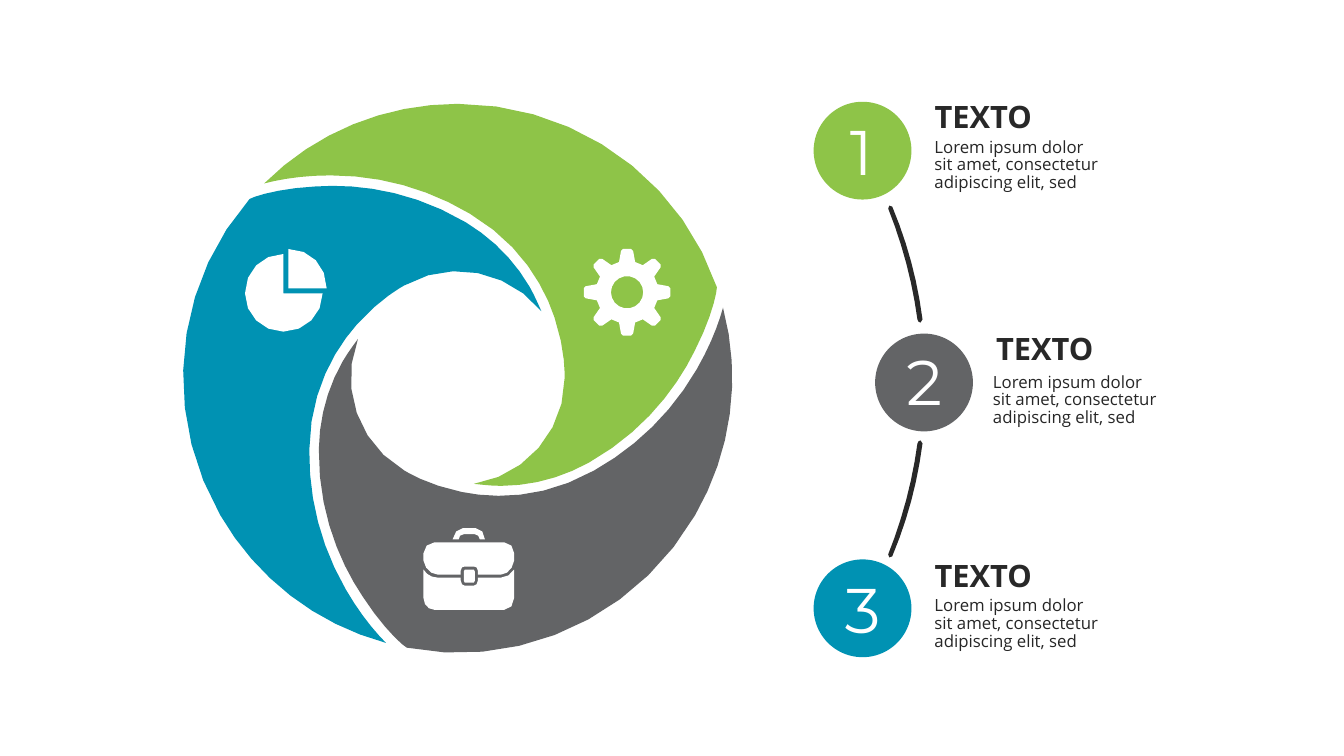
import math
from dataclasses import dataclass

import pptx
import pptx.dml.color
import pptx.enum.shapes
import pptx.enum.text
import pptx.util

Inches = pptx.util.Inches


@dataclass(frozen=True)
class Theme:
    """Colours, fonts and type sizes of the slide."""
    green: str = "8EC448"
    grey: str = "636466"
    blue: str = "0092B3"
    white: str = "FFFFFF"
    ink: str = "282828"
    body_ink: str = "262626"
    sans: str = "Open Sans"
    numeral: str = "Montserrat"
    title_size: int = 22
    body_size: int = 12
    number_size: int = 45


THEME = Theme()
WHEEL_CENTER = (4.54, 3.75)
GEAR_CENTER = (6.22, 2.9)
ARC_MIRROR = 7.57
SMOOTHNESS = 5
LOREM = "Lorem ipsum dolor sit amet, consectetur adipiscing elit, sed"

BLADE = [
    (5.84, 4.59), (6.41, 4.27, 6.73, 3.81, 6.89, 3.48),
    (7.05, 3.17, 7.11, 2.91, 7.11, 2.85), (6.74, 1.76, 5.7, 1.03, 4.54, 1.03),
    (3.82, 1.03, 3.13, 1.31, 2.62, 1.82), (2.77, 1.78, 3, 1.74, 3.28, 1.74),
    (3.77, 1.74, 4.24, 1.87, 4.66, 2.12), (5.17, 2.42, 5.4, 2.85, 5.5, 3.15),
    (5.61, 3.48, 5.6, 3.73, 5.6, 3.75), (5.6, 4.28, 5.21, 4.72, 4.7, 4.8),
    (4.79, 4.81, 4.88, 4.82, 4.97, 4.82), (5.27, 4.82, 5.57, 4.74, 5.84, 4.59),
]
ARC = [
    (9.13, 3.2), (9.12, 3.2, 9.1, 3.19, 9.1, 3.17),
    (9.05, 2.8, 8.95, 2.42, 8.81, 2.07), (8.8, 2.06, 8.81, 2.04, 8.82, 2.04),
    (8.83, 2.03, 8.85, 2.04, 8.85, 2.05), (9, 2.41, 9.1, 2.78, 9.15, 3.17),
    (9.16, 3.18, 9.15, 3.19, 9.13, 3.2),
]
PIE = [
    [(2.81, 2.91), (3.2, 2.91), (3.2, 3.12, 3.03, 3.29, 2.81, 3.29),
     (2.6, 3.29, 2.43, 3.12, 2.43, 2.91), (2.43, 2.69, 2.6, 2.52, 2.81, 2.52)],
    [(2.86, 2.47), (2.86, 2.86), (3.24, 2.86), (3.24, 2.64, 3.08, 2.47, 2.86, 2.47)],
]
BRIEFCASE = [
    [(4.81, 5.35), (4.76, 5.35), (4.76, 5.32, 4.73, 5.3, 4.71, 5.3), (4.6, 5.3),
     (4.57, 5.3, 4.55, 5.32, 4.55, 5.35), (4.49, 5.35),
     (4.5, 5.29, 4.54, 5.24, 4.59, 5.24), (4.72, 5.24),
     (4.77, 5.24, 4.81, 5.29, 4.81, 5.35)],
    [(4.34, 5.7), (4.57, 5.7), (4.57, 5.66), (4.57, 5.63, 4.59, 5.62, 4.61, 5.62),
     (4.7, 5.62), (4.72, 5.62, 4.74, 5.63, 4.74, 5.66), (4.74, 5.7), (4.97, 5.7),
     (5.03, 5.7, 5.09, 5.64, 5.1, 5.56), (5.1, 5.49),
     (5.1, 5.43, 5.06, 5.38, 5, 5.38), (4.31, 5.38),
     (4.25, 5.38, 4.2, 5.43, 4.2, 5.49), (4.2, 5.56),
     (4.21, 5.64, 4.28, 5.7, 4.34, 5.7)],
    [(4.97, 5.73), (4.74, 5.73), (4.74, 5.76), (4.74, 5.79, 4.72, 5.81, 4.7, 5.81),
     (4.61, 5.81), (4.59, 5.81, 4.57, 5.79, 4.57, 5.76), (4.57, 5.73), (4.34, 5.73),
     (4.28, 5.73, 4.23, 5.7, 4.2, 5.65), (4.2, 5.93),
     (4.2, 6, 4.25, 6.05, 4.31, 6.05), (5, 6.05),
     (5.06, 6.05, 5.1, 6, 5.1, 5.93), (5.1, 5.65),
     (5.07, 5.7, 5.02, 5.73, 4.97, 5.73)],
    [(4.7, 5.65), (4.61, 5.65), (4.6, 5.67), (4.6, 5.76), (4.61, 5.78),
     (4.7, 5.78), (4.71, 5.76), (4.71, 5.67)],
]


def trace(segments):
    """Turn line and cubic segments into points, finer on longer curves."""
    points = [segments[0]]
    for seg in segments[1:]:
        if len(seg) == 2:
            points.append(seg)
            continue
        x0, y0 = points[-1]
        x1, y1, x2, y2, x3, y3 = seg
        steps = math.ceil(SMOOTHNESS * math.sqrt(math.hypot(x3 - x0, y3 - y0)))
        for i in range(1, steps + 1):
            t = i / steps
            a, b, c, d = (1 - t) ** 3, 3 * t * (1 - t) ** 2, 3 * t * t * (1 - t), t ** 3
            points.append((a * x0 + b * x1 + c * x2 + d * x3,
                           a * y0 + b * y1 + c * y2 + d * y3))
    return points


def rotate(points, center, degrees):
    """Rotate points clockwise about a center."""
    cx, cy = center
    cos, sin = math.cos(math.radians(degrees)), math.sin(math.radians(degrees))
    return [(cx + (x - cx) * cos - (y - cy) * sin,
             cy + (x - cx) * sin + (y - cy) * cos) for x, y in points]


def gear_contours():
    """Return the eight-toothed rim and the hole of the gear."""
    cx, cy = GEAR_CENTER
    half = [(0.3, 0.08), (0.41, 0.06), (0.43, 0.04)]
    tooth = [(cx + x, cy - y) for x, y in half] + [(cx + x, cy + y) for x, y in half[::-1]]
    rim = [p for k in range(8) for p in rotate(tooth, GEAR_CENTER, 45 * k)]
    hole = [rotate([(cx + 0.16, cy)], GEAR_CENTER, -20 * k)[0] for k in range(18)]
    return [rim, hole]


def paint(sp, color):
    """Give a shape a flat fill without line or shadow."""
    sp.shadow.inherit = False
    sp.fill.solid()
    sp.fill.fore_color.rgb = pptx.dml.color.RGBColor.from_string(color)
    sp.line.fill.background()


def add_outline(s, contours, color):
    """Draw closed contours as one filled freeform."""
    builder = None
    for contour in contours:
        points = [(Inches(x), Inches(y)) for x, y in contour]
        if builder is None:
            builder = s.shapes.build_freeform(*points[0], scale=1.0)
        else:
            builder.move_to(*points[0])
        builder.add_line_segments(points[1:], close=True)
    paint(builder.convert_to_shape(), color)


def add_text(s, box, text, font, color, spacing=1.0, inset=(0, 0)):
    """Add a wrapped text box with one formatted run."""
    tf = s.shapes.add_textbox(*map(Inches, box)).text_frame
    dx, dy = map(Inches, inset)
    frame = {"word_wrap": True, "margin_left": dx, "margin_right": dx,
             "margin_top": dy, "margin_bottom": dy,
             "vertical_anchor": pptx.enum.text.MSO_ANCHOR.TOP}
    for name, value in frame.items():
        setattr(tf, name, value)
    p = tf.paragraphs[0]
    p.line_spacing = spacing
    r = p.add_run()
    r.text = text
    for name, value in font.items():
        setattr(r.font, name, value)
    r.font.color.rgb = pptx.dml.color.RGBColor.from_string(color)


def add_step(s, number, color, disc, number_at, title_at, body_at):
    """Add a numbered disc with its title and description."""
    sp = s.shapes.add_shape(pptx.enum.shapes.MSO_SHAPE.OVAL,
                            *map(Inches, (*disc, 0.97, 0.97)))
    paint(sp, color)
    pt = pptx.util.Pt
    add_text(s, (*number_at, 0.74, 0.91), number,
             {"name": THEME.numeral, "size": pt(THEME.number_size)}, THEME.white)
    add_text(s, (*title_at, 1.62, 0.5), "TEXTO",
             {"name": THEME.sans, "size": pt(THEME.title_size), "bold": True},
             THEME.ink, 0.94)
    add_text(s, (*body_at, 1.86, 0.71), LOREM,
             {"name": THEME.sans, "size": pt(THEME.body_size)},
             THEME.body_ink, 0.88, (0.1, 0.05))


def main():
    """Build and save the slide."""
    prs = pptx.Presentation()
    prs.slide_width, prs.slide_height = Inches(13.33), Inches(7.5)
    s = prs.slides.add_slide(prs.slide_layouts[6])

    blade = trace(BLADE)
    for k, color in enumerate((THEME.green, THEME.grey, THEME.blue)):
        add_outline(s, [rotate(blade, WHEEL_CENTER, 120 * k)], color)
    for icon in (gear_contours(), map(trace, BRIEFCASE), map(trace, PIE)):
        add_outline(s, icon, THEME.white)

    arc = trace(ARC)
    for points in (arc, [(x, ARC_MIRROR - y) for x, y in arc]):
        add_outline(s, [points], THEME.ink)

    add_step(s, "1", THEME.green, (8.07, 1.01), (8.43, 1.12), (9.27, 1), (9.17, 1.33))
    add_step(s, "2", THEME.grey, (8.68, 3.31), (8.99, 3.4), (9.88, 3.3), (9.75, 3.66))
    add_step(s, "3", THEME.blue, (8.07, 5.55), (8.38, 5.66), (9.27, 5.55), (9.17, 5.88))
    prs.save("out.pptx")


if __name__ == "__main__":
    main()
